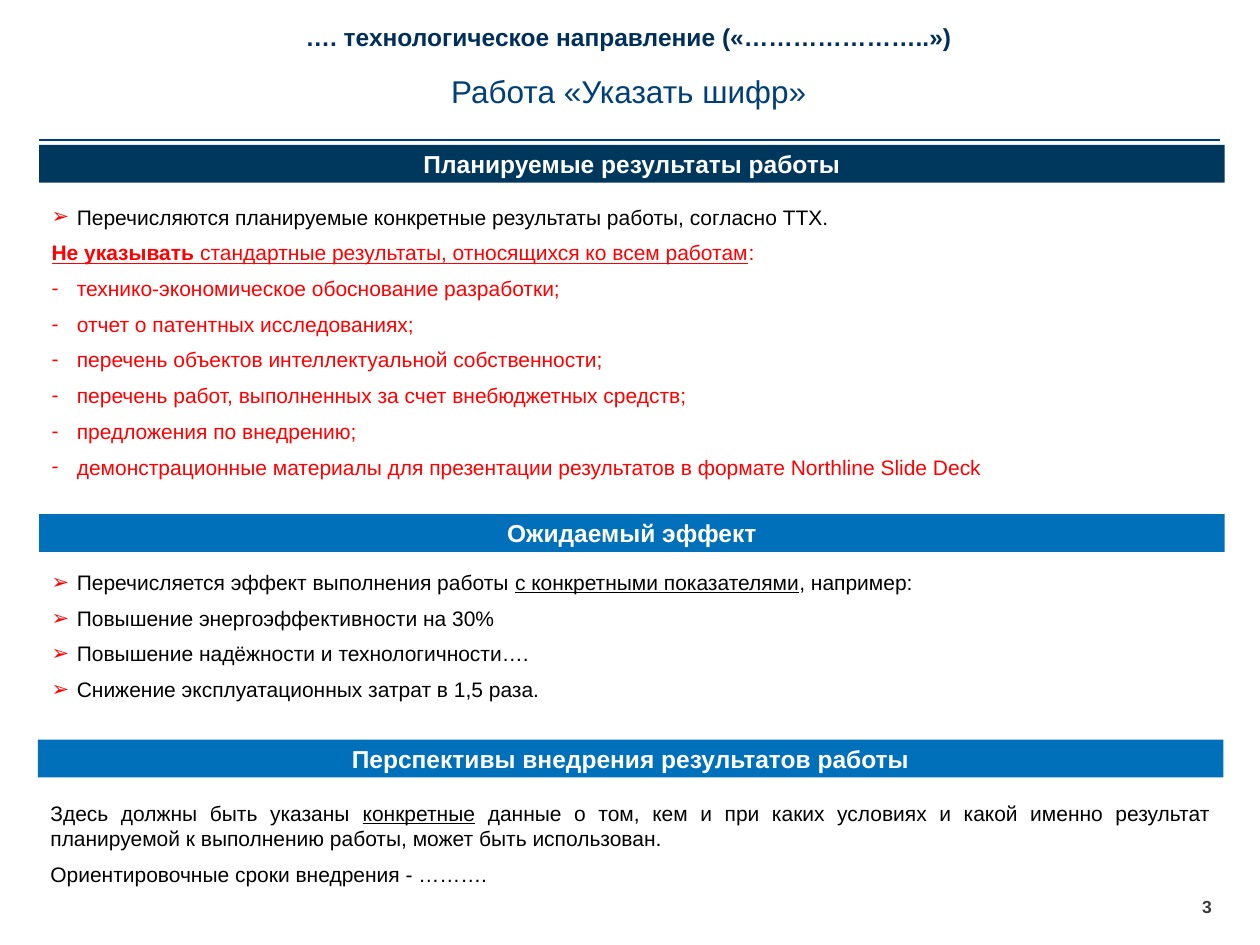
from lxml.etree import SubElement
from pptx import Presentation
from pptx.dml.color import RGBColor
from pptx.enum.shapes import MSO_CONNECTOR, MSO_SHAPE
from pptx.enum.text import MSO_ANCHOR, MSO_AUTO_SIZE, PP_ALIGN
from pptx.oxml.ns import qn
from pptx.util import Inches, Pt

NAVY = RGBColor(0x00, 0x30, 0x59)
BLUE = RGBColor(0x00, 0x40, 0x77)
DARK_BAND = RGBColor(0x00, 0x38, 0x5D)
BRIGHT_BAND = RGBColor(0x00, 0x70, 0xBA)
RED = RGBColor(0xFF, 0x00, 0x00)
BLACK = RGBColor(0x00, 0x00, 0x00)
WHITE = RGBColor(0xFF, 0xFF, 0xFF)
GREY = RGBColor(0x3C, 0x3C, 0x3C)

FONT = "Arial"
LEFT, WIDTH, BAND_HEIGHT = 0.31, 9.41, 0.3
INDENT = 0.2
ARROW, DASH = "➢", "-"

UNWANTED_RESULTS = [
    "технико-экономическое обоснование разработки;",
    "отчет о патентных исследованиях;",
    "перечень объектов интеллектуальной собственности;",
    "перечень работ, выполненных за счет внебюджетных средств;",
    "предложения по внедрению;",
    "демонстрационные материалы для презентации результатов в формате Northline Slide Deck",
]
EFFECTS = [
    "Повышение энергоэффективности на 30%",
    "Повышение надёжности и технологичности….",
    "Снижение эксплуатационных затрат в 1,5 раза.",
]


def style(font, size, color, bold=False, underline=False):
    font.name, font.size = FONT, Pt(size)
    font.bold, font.underline = bold, underline
    font.color.rgb = color


def set_bullet(paragraph, bullet, hanging):
    props = paragraph._p.get_or_add_pPr()
    margin = Inches(INDENT) if hanging else 0
    props.set("marL", str(margin))
    props.set("indent", str(-margin))
    if not bullet:
        SubElement(props, qn("a:buNone"))
        return
    SubElement(SubElement(props, qn("a:buClr")), qn("a:srgbClr")).set("val", str(RED))
    SubElement(props, qn("a:buFont")).set("typeface", FONT)
    SubElement(props, qn("a:buChar")).set("char", bullet)


def write(paragraph, text, size=12, color=BLACK, bold=False, align=PP_ALIGN.JUSTIFY,
          bullet=None, hanging=False, after=0):
    """Text is a string, or a list of (string, font overrides) pieces."""
    set_bullet(paragraph, bullet, hanging or bool(bullet))
    paragraph.alignment = align
    paragraph.line_spacing = 1.0
    paragraph.space_before, paragraph.space_after = Pt(0), Pt(after)
    pieces = [(text, {})] if isinstance(text, str) else text
    for words, changes in pieces:
        run = paragraph.add_run()
        run.text = words
        style(run.font, **{"size": size, "color": color, "bold": bold, **changes})


def place(shape, left, top, width, height, anchor=MSO_ANCHOR.TOP, inset=(0.1, 0.05)):
    shape.left, shape.top = Inches(left), Inches(top)
    shape.width, shape.height = Inches(width), Inches(height)
    frame = shape.text_frame
    frame.word_wrap, frame.auto_size = True, MSO_AUTO_SIZE.NONE
    frame.vertical_anchor = anchor
    frame.margin_left = frame.margin_right = Inches(inset[0])
    frame.margin_top = frame.margin_bottom = Inches(inset[1])
    return frame


def fill_body(body, top, height, items, left=LEFT):
    frame = place(body, left, top, WIDTH, height)
    for number, (text, options) in enumerate(items):
        paragraph = frame.add_paragraph() if number else frame.paragraphs[0]
        write(paragraph, text, after=6, **options)


def add_band(slide, text, top, color, left=LEFT):
    band = slide.shapes.add_shape(MSO_SHAPE.RECTANGLE, 0, 0, 0, 0)
    band.shadow.inherit = False
    band.fill.solid()
    band.fill.fore_color.rgb = color
    band.line.fill.background()
    frame = place(band, left, top, WIDTH, BAND_HEIGHT, MSO_ANCHOR.MIDDLE)
    write(frame.paragraphs[0], text, size=14, color=WHITE, bold=True, align=PP_ALIGN.CENTER)


def add_rule(slide, left, right, top):
    rule = slide.shapes.add_connector(MSO_CONNECTOR.STRAIGHT, Inches(left), Inches(top),
                                      Inches(right), Inches(top))
    rule.line.color.rgb, rule.line.width = BLUE, Pt(1)
    SubElement(rule._element.spPr, qn("a:effectLst"))


def add_page_number(slide, number):
    box = slide.shapes.add_textbox(0, 0, 0, 0)
    frame = place(box, 9.54, 7.11, 0.24, 0.18, inset=(0, 0))
    write(frame.paragraphs[0], number, size=10, color=GREY, bold=True, align=PP_ALIGN.LEFT)


def main():
    deck = Presentation()
    deck.slide_width, deck.slide_height = Inches(10), Inches(7.5)
    # The comparison layout offers a title and four body placeholders
    slide = deck.slides.add_slide(deck.slide_layouts[4])
    direction, work, results, prospects, effect = [
        slide.placeholders[idx] for idx in (0, 1, 2, 3, 4)]

    # Heading
    add_rule(slide, LEFT, 9.68, 1.11)
    frame = place(direction, LEFT, 0.12, 9.36, 0.29, MSO_ANCHOR.BOTTOM, inset=(0, 0))
    write(frame.paragraphs[0], "…. технологическое направление («…………………..»)",
          size=14, color=NAVY, bold=True, align=PP_ALIGN.CENTER)
    frame = place(work, 0.3, 0.52, 9.38, 0.4)
    write(frame.paragraphs[0], "Работа «Указать шифр»", size=18, color=BLUE,
          align=PP_ALIGN.CENTER)

    # Planned results
    add_band(slide, "Планируемые результаты работы", 1.15, DARK_BAND)
    warning = [("Не указывать ", {"bold": True, "underline": True}),
               ("стандартные результаты, относящихся ко всем работам", {"underline": True}),
               (":", {})]
    fill_body(results, 1.57, 2.31, [
        ("Перечисляются планируемые конкретные результаты работы, согласно ТТХ.",
         {"bullet": ARROW}),
        (warning, {"color": RED, "hanging": True}),
        *[(item, {"color": RED, "bullet": DASH}) for item in UNWANTED_RESULTS]])

    # Expected effect
    add_band(slide, "Ожидаемый эффект", 4.08, BRIGHT_BAND)
    intro = [("Перечисляется эффект выполнения работы ", {}),
             ("с конкретными показателями", {"underline": True}),
             (", например:", {})]
    fill_body(effect, 4.47, 1.16, [(item, {"bullet": ARROW}) for item in [intro, *EFFECTS]])

    # Prospects of adoption
    add_band(slide, "Перспективы внедрения результатов работы", 5.87, BRIGHT_BAND, left=0.3)
    usage = [("Здесь должны быть указаны ", {}),
             ("конкретные", {"underline": True}),
             (" данные о том, кем и при каких условиях и какой именно результат "
              "планируемой к выполнению работы, может быть использован.", {})]
    fill_body(prospects, 6.3, 0.79,
              [(usage, {}), ("Ориентировочные сроки внедрения - ……….", {})], left=0.3)

    add_page_number(slide, "3")
    deck.save("out.pptx")


if __name__ == "__main__":
    main()
